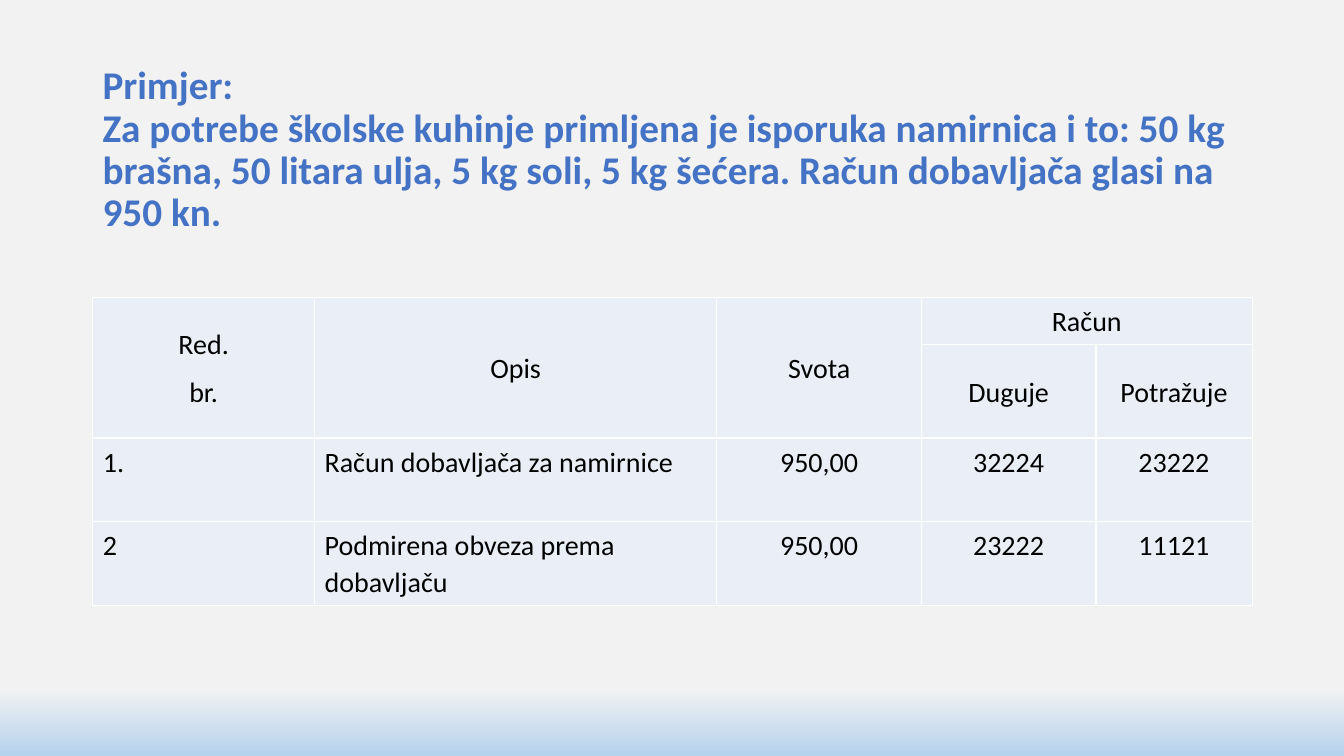
import pptx
import pptx.dml.color
import pptx.enum.text
import pptx.oxml
import pptx.oxml.ns
import pptx.util

Inches, Pt = pptx.util.Inches, pptx.util.Pt
ALIGN = pptx.enum.text.PP_ALIGN
ANCHOR = pptx.enum.text.MSO_ANCHOR

SLIDE_W, SLIDE_H = 13.33, 7.5
LEFT, CONTENT_W = 0.92, 11.5
FONT = "Calibri"
COLORS = {
    "page": "F2F2F2",
    "page_foot": "B5D2EC",
    "heading": "4472C4",
    "text": "000000",
    "cell": "EAEFF7",
    "border": "FFFFFF",
}

HEADING_LINES = [
    "Primjer:",
    "Za potrebe školske kuhinje primljena je isporuka namirnica i to: 50 kg "
    "brašna, 50 litara ulja, 5 kg soli, 5 kg šećera. Račun dobavljača glasi na 950 kn.",
]
COLUMN_WIDTHS = [2.2, 3.99, 2.03, 1.73, 1.55]
ROW_HEIGHTS = [0.47, 0.72, 0.83, 0.83]
HEADER_ROWS = 2
LEFT_COLUMNS = 2
# Merged header cells: first and last (row, column)
MERGES = [((0, 0), (1, 0)), ((0, 1), (1, 1)), ((0, 2), (1, 2)), ((0, 3), (0, 4))]
ENTRIES = [
    ["Red.\nbr.", "Opis", "Svota", "Račun", ""],
    ["", "", "", "Duguje", "Potražuje"],
    ["1.", "Račun dobavljača za namirnice", "950,00", "32224", "23222"],
    ["2", "Podmirena obveza prema dobavljaču", "950,00", "23222", "11121"],
]


def rgb(name):
    return pptx.dml.color.RGBColor.from_string(COLORS[name])


def add_run(paragraph, text, size, color, bold=False):
    run = paragraph.add_run()
    run.text = text
    run.font.name, run.font.size, run.font.bold = FONT, Pt(size), bold
    run.font.color.rgb = rgb(color)


def paint_background(slide):
    fill = slide.background.fill
    fill.gradient()
    fill.gradient_angle = 270
    for stop, position, color in zip(fill.gradient_stops, (0.91, 1), ("page", "page_foot")):
        stop.position = position
        stop.color.rgb = rgb(color)


def add_heading(slide, left, top, width, height):
    frame = slide.shapes.add_textbox(*map(Inches, (left, top, width, height))).text_frame
    frame.word_wrap = True
    frame.vertical_anchor = ANCHOR.MIDDLE
    frame.margin_bottom = Inches(0.47)  # lifts the text by half a line
    paragraph = frame.paragraphs[0]
    paragraph.line_spacing = 0.9
    for index, line in enumerate(HEADING_LINES):
        if index:
            paragraph.add_line_break()
        add_run(paragraph, line, 28, "heading", bold=True)


def style_cell(cell):
    properties = cell._tc.get_or_add_tcPr()
    for side in ("lnL", "lnR", "lnT", "lnB"):
        properties.append(pptx.oxml.parse_xml(
            f'<a:{side} {pptx.oxml.ns.nsdecls("a")} w="{Pt(1)}"><a:solidFill>'
            f'<a:srgbClr val="{COLORS["border"]}"/></a:solidFill></a:{side}>'))
    cell.fill.solid()
    cell.fill.fore_color.rgb = rgb("cell")


def write_cell(cell, text, align, anchor):
    cell.vertical_anchor = anchor
    for index, line in enumerate(text.split("\n")):
        frame = cell.text_frame
        paragraph = frame.add_paragraph() if index else frame.paragraphs[0]
        paragraph.alignment = align
        paragraph.line_spacing = 1.07
        paragraph.space_after = Pt(8)
        add_run(paragraph, line, 20, "text")


def add_ledger(slide, left, top, width, height):
    ledger = slide.shapes.add_table(
        len(ROW_HEIGHTS), len(COLUMN_WIDTHS), *map(Inches, (left, top, width, height))).table
    ledger.first_row = ledger.horz_banding = False
    for column, share in zip(ledger.columns, COLUMN_WIDTHS):
        column.width = Inches(width * share / sum(COLUMN_WIDTHS))
    for row, share in zip(ledger.rows, ROW_HEIGHTS):
        row.height = Inches(height * share / sum(ROW_HEIGHTS))
    for first, last in MERGES:
        ledger.cell(*first).merge(ledger.cell(*last))

    for row, entries in enumerate(ENTRIES):
        is_header = row < HEADER_ROWS
        for column, text in enumerate(entries):
            cell = ledger.cell(row, column)
            style_cell(cell)
            if text:
                centred = is_header or column >= LEFT_COLUMNS
                write_cell(cell, text, ALIGN.CENTER if centred else ALIGN.LEFT,
                           ANCHOR.MIDDLE if is_header else ANCHOR.TOP)


def main():
    deck = pptx.Presentation()
    deck.slide_width, deck.slide_height = Inches(SLIDE_W), Inches(SLIDE_H)
    slide = deck.slides.add_slide(deck.slide_layouts[6])
    paint_background(slide)
    add_heading(slide, LEFT, 0.98, CONTENT_W, 1.45)
    add_ledger(slide, LEFT, 2.95, CONTENT_W, sum(ROW_HEIGHTS))
    deck.save("out.pptx")


if __name__ == "__main__":
    main()
